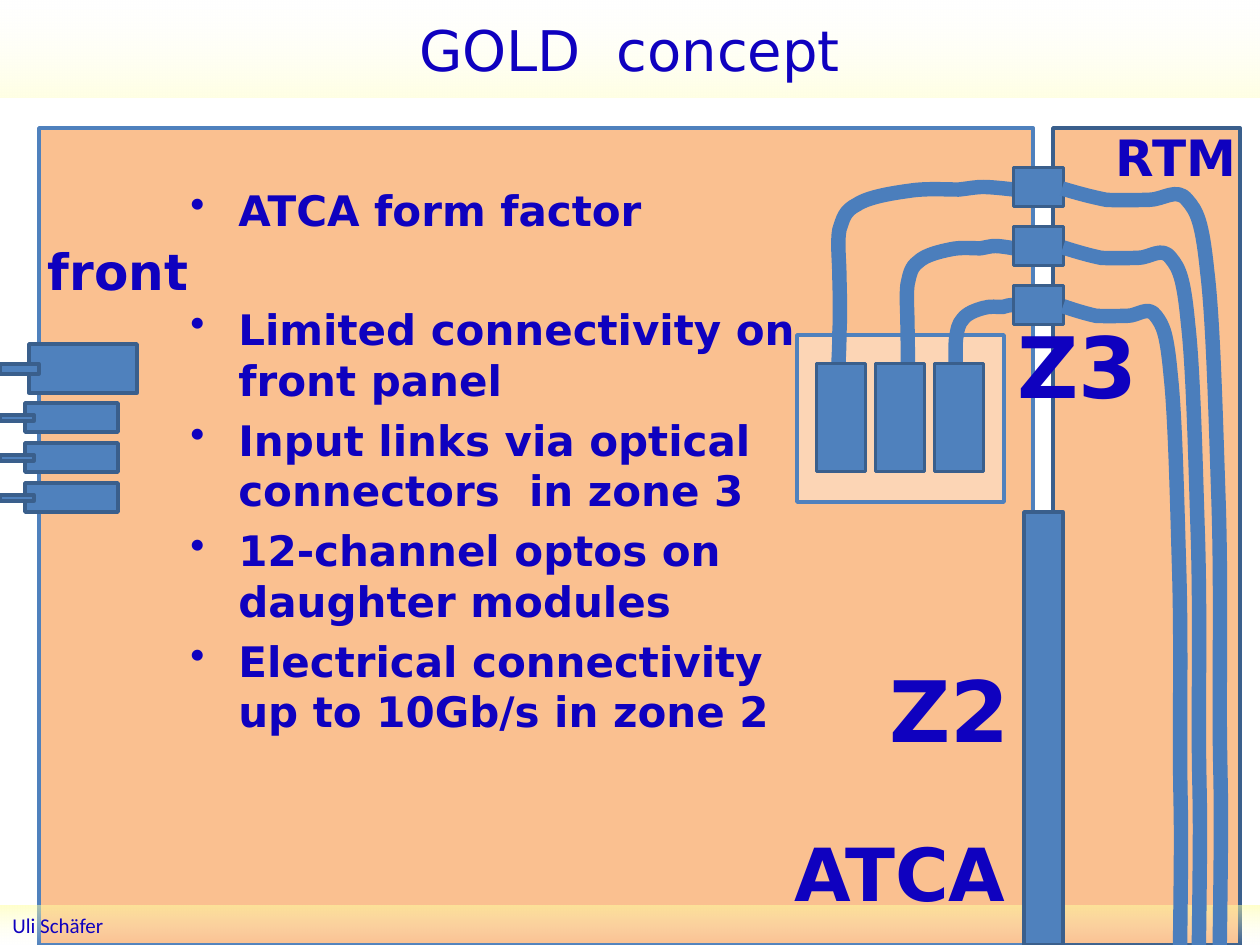
from dataclasses import dataclass
from lxml.etree import SubElement
from pptx import Presentation
from pptx.dml.color import RGBColor
from pptx.enum.shapes import MSO_SHAPE
from pptx.enum.text import MSO_ANCHOR, PP_ALIGN
from pptx.oxml.ns import qn
from pptx.util import Pt

SCALE = 914400 / 126
HANGING = 48


@dataclass(frozen=True)
class Theme:
    ink: str = "0F01BF"
    board: str = "FAC090"
    daughter: str = "FCD5B5"
    component: str = "4F81BD"
    component_edge: str = "3A5F8C"
    fiber: str = "4B7EBC"
    band_start: str = "FFFFA0"
    band_end: str = "FFFFE3"
    heading_font: str = "DejaVu Sans"
    footer_font: str = "Calibri"
    title_size: float = 32
    body_size: float = 24
    label_size: float = 28.6
    form_size: float = 41.8
    zone_size: float = 48.4
    footer_size: float = 12
    edge_width: float = 2
    fiber_width: float = 8.25


THEME = Theme()

BULLETS = [
    ("ATCA form factor", 5.6),
    ("Limited connectivity on front panel", 39.5),
    ("Input links via optical connectors  in zone 3", 5.6),
    ("12-channel optos on daughter modules", 5.6),
    ("Electrical connectivity up to 10Gb/s in zone 2", 5.6),
]

LABELS = [
    ("RTM", (1092, 108, 168, 108), THEME.label_size),
    ("front", (29, 227, 178, 98), THEME.label_size),
    ("ATCA", (777, 816, 246, 129), THEME.form_size),
    ("Z2", (876, 659, 147, 118), THEME.zone_size),
    ("Z3", (1004, 325, 147, 98), THEME.zone_size),
]

FRONT_PROFILE = [
    (0, 1000),
    (7, 912), (14, 818), (14, 730),
    (21, 635), (14, 453), (14, 453),
    (14, 365), (0, 277), (14, 214),
    (35, 157), (43, 119), (113, 88),
    (177, 50), (312, 31), (411, 19),
    (504, 6), (617, 13), (688, 13),
    (759, 6), (780, 0), (830, 0),
    (879, 0), (1000, 13), (1000, 13),
]

REAR_PROFILE = [
    (0, 2),
    (95, 8), (183, 13), (278, 17),
    (365, 18), (548, 17), (548, 17),
    (635, 17), (722, 0), (786, 17),
    (849, 32), (881, 45), (913, 111),
    (952, 176), (968, 314), (984, 410),
    (1000, 507), (992, 616), (992, 686),
    (992, 757), (1000, 781), (1000, 834),
    (1000, 885), (992, 1000), (992, 1000),
]

FRONT_FIBERS = [(837, 187, 177, 200), (906, 246, 108, 180), (955, 305, 69, 161)]
REAR_FIBERS = [(1062, 187, 159, 758), (1063, 246, 137, 699), (1063, 305, 118, 640)]


def px(length):
    return round(length * SCALE)


def apply(target, values):
    for name, value in values.items():
        setattr(target, name, value)


def add_block(shapes, frame, fill, edge=THEME.component_edge, rotation=0):
    block = shapes.add_shape(MSO_SHAPE.RECTANGLE, *map(px, frame))
    block.shadow.inherit = False
    block.rotation = rotation
    block.fill.solid()
    block.fill.fore_color.rgb = RGBColor.from_string(fill)
    block.line.color.rgb = RGBColor.from_string(edge)
    block.line.width = Pt(THEME.edge_width)


def write_span(para, text, size, font=THEME.heading_font, bold=False):
    span = para.add_run()
    span.text = text
    apply(span.font, {"size": Pt(size), "name": font, "bold": bold})
    span.font.color.rgb = RGBColor.from_string(THEME.ink)


def hang_indent(para):
    properties = para._p.get_or_add_pPr()
    properties.set("marL", str(px(HANGING)))
    properties.set("indent", str(-px(HANGING)))
    return properties


def add_band(shapes, frame, angle, opacity, text, align, size, font):
    band = shapes.add_shape(MSO_SHAPE.RECTANGLE, *map(px, frame))
    band.shadow.inherit = False
    band.line.fill.background()
    band.fill.gradient()
    band.fill.gradient_angle = angle
    colors = (THEME.band_start, THEME.band_end)
    for stop, color in zip(band.fill.gradient_stops, colors):
        stop.color.rgb = RGBColor.from_string(color)
    tints = band._element.spPr.iter(qn("a:srgbClr"))
    for tint, percent in zip(tints, (opacity, 0)):
        SubElement(tint, qn("a:alpha")).set("val", str(percent * 1000))
    apply(band.text_frame, {"word_wrap": True, "vertical_anchor": MSO_ANCHOR.MIDDLE})
    para = band.text_frame.paragraphs[0]
    para.alignment = align
    write_span(para, text, size, font)


def add_bullets(shapes, frame):
    box = shapes.add_textbox(*map(px, frame))
    box.text_frame.word_wrap = True
    for index, (text, gap) in enumerate(BULLETS):
        para = box.text_frame.add_paragraph() if index else box.text_frame.paragraphs[0]
        para.space_before = Pt(gap)
        SubElement(hang_indent(para), qn("a:buChar")).set("char", "•")
        write_span(para, text, THEME.body_size, bold=True)


def add_label(shapes, text, frame, size):
    box = shapes.add_textbox(*map(px, frame))
    apply(box.text_frame, {"word_wrap": True, "vertical_anchor": MSO_ANCHOR.MIDDLE})
    para = box.text_frame.paragraphs[0]
    apply(para, {"alignment": PP_ALIGN.CENTER, "line_spacing": 0.8})
    hang_indent(para)
    write_span(para, text, size, bold=True)


def add_fiber(shapes, frame, profile):
    left, top, width, height = frame
    points = [
        (px(left + x * width / 1000), px(top + y * height / 1000)) for x, y in profile
    ]
    builder = shapes.build_freeform(*points[0])
    builder.add_line_segments(points[1:], close=False)
    fiber = builder.convert_to_shape()
    segments = list(fiber._element.iter(qn("a:lnTo")))
    for start in range(0, len(segments), 3):
        curve = SubElement(segments[start].getparent(), qn("a:cubicBezTo"))
        for segment in segments[start:start + 3]:
            curve.append(segment[0])
            segment.getparent().remove(segment)
    fiber.shadow.inherit = False
    fiber.fill.background()
    fiber.line.color.rgb = RGBColor.from_string(THEME.fiber)
    fiber.line.width = Pt(THEME.fiber_width)


def add_port(shapes, body, cable):
    port = shapes.add_group_shape()
    for frame in (body, cable):
        add_block(port.shapes, frame, THEME.component)


def add_optical_links(shapes):
    for row, (front, rear) in enumerate(zip(FRONT_FIBERS, REAR_FIBERS)):
        shift = 59 * row
        add_fiber(shapes, front, FRONT_PROFILE)
        add_block(shapes, (787 + shift, 393, 108, 49), THEME.component, rotation=90)
        add_block(shapes, (1019, 162 + shift, 39, 50), THEME.component, rotation=90)
        add_fiber(shapes, rear, REAR_PROFILE)


def main():
    deck = Presentation()
    apply(deck, {"slide_width": px(1260), "slide_height": px(945)})
    page = deck.slides.add_slide(deck.slide_layouts[6])
    shapes = page.shapes
    add_block(shapes, (39, 128, 994, 817), THEME.board, THEME.component)
    add_band(shapes, (0, 0, 1260, 98), 90, 29, "GOLD  concept",
             PP_ALIGN.CENTER, THEME.title_size, THEME.heading_font)
    add_bullets(shapes, (178, 178, 640, 679))
    add_block(shapes, (1053, 128, 187, 817), THEME.board)
    add_block(shapes, (797, 335, 207, 167), THEME.daughter, THEME.component)
    add_band(shapes, (0, 906, 1260, 39), 270, 54, "Uli Schäfer",
             PP_ALIGN.LEFT, THEME.footer_size, THEME.footer_font)
    add_port(shapes, (29, 344, 108, 49), (0, 364, 39, 10))
    for top in range(403, 484, 40):
        add_port(shapes, (25, top, 93, 29), (0, top + 12, 34, 6))
    add_block(shapes, (1024, 512, 39, 433), THEME.component)
    add_optical_links(shapes)
    for text, frame, size in LABELS:
        add_label(shapes, text, frame, size)
    deck.save("out.pptx")


if __name__ == "__main__":
    main()
